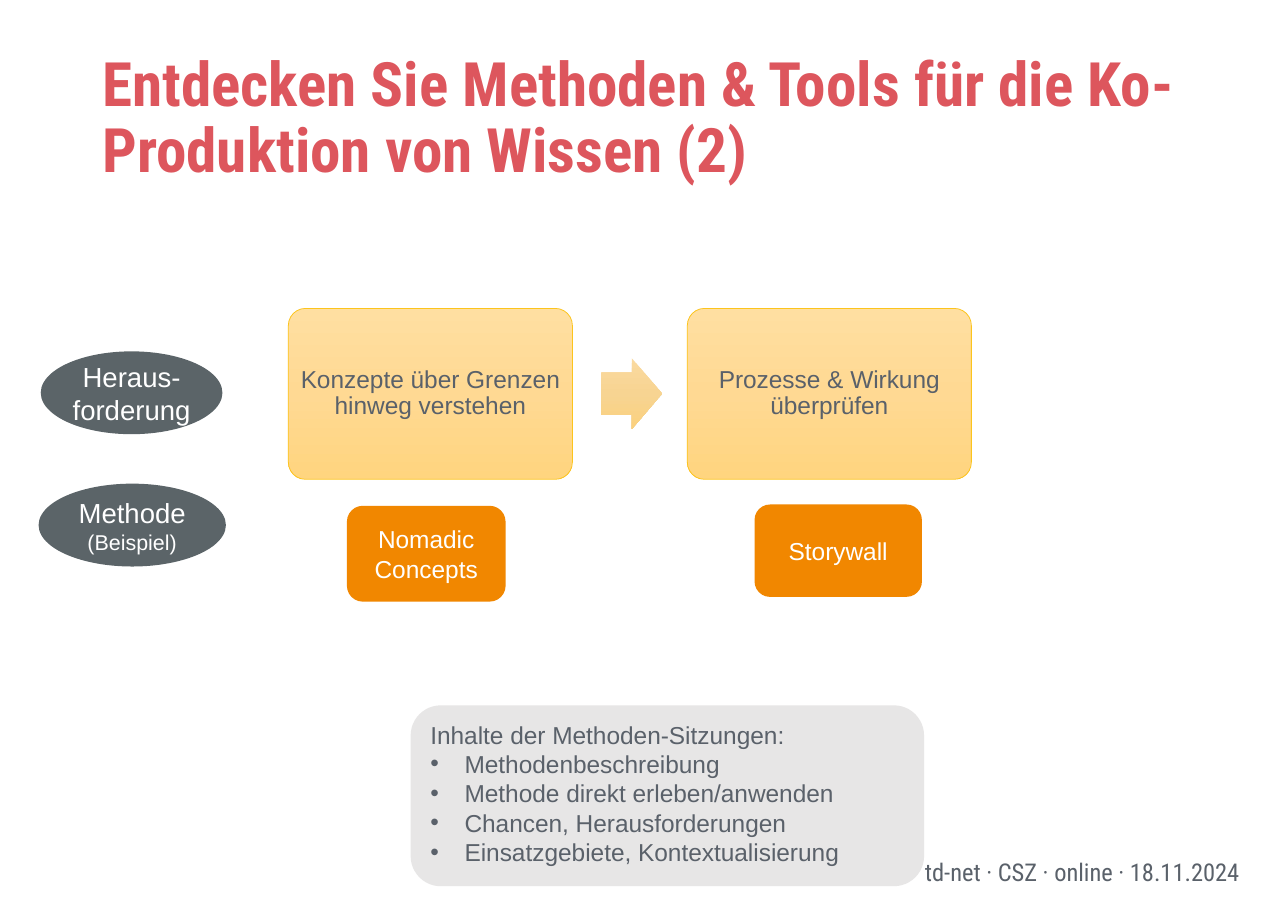
from copy import deepcopy
from dataclasses import dataclass

from lxml import etree
from pptx import Presentation
from pptx import util as u
from pptx.dml.color import RGBColor
from pptx.enum import shapes, text
from pptx.oxml.ns import qn

SANS, CONDENSED = "Arial", "Roboto Condensed"
GREY, WHITE, RED = "5A616A", "FFFFFF", "DD565D"
SLATE, ORANGE, PALE = "5B6468", "F18700", "E7E6E6"
STEP_STOPS = ("FFDFA1", "FFD993", "FFD57F")
ARROW_STOPS = ("FADAA0", "F7D492", "FBD17E")
CENTER, LEFT, RIGHT = text.PP_ALIGN.CENTER, text.PP_ALIGN.LEFT, text.PP_ALIGN.RIGHT
ROUNDED, OVAL = shapes.MSO_SHAPE.ROUNDED_RECTANGLE, shapes.MSO_SHAPE.OVAL
STEP_LEFT, STEP_PITCH, STEP_TOP = 6.65, 9.2, 7.11


@dataclass
class Box:
    """Place and size in centimetres."""
    left: float
    top: float
    width: float
    height: float

    def lengths(self):
        return [u.Cm(v) for v in (self.left, self.top, self.width, self.height)]


@dataclass
class Run:
    words: str
    size: float = 16
    color: str = WHITE
    font: str = SANS
    bold: bool = False


@dataclass
class Node:
    """A filled shape with one centred paragraph."""
    box: Box
    preset: int
    fill: str
    runs: list[Run]
    inset: float = 0.1


def rgb(hex_color: str) -> RGBColor:
    return RGBColor.from_string(hex_color)


def add_runs(paragraph, runs: list[Run], align=LEFT, spacing: float = 1.0) -> None:
    paragraph.alignment = align
    paragraph.line_spacing = spacing
    for item in runs:
        run = paragraph.add_run()
        run.text = item.words
        run.font.size = u.Pt(item.size)
        run.font.name = item.font
        run.font.bold = item.bold
        run.font.color.rgb = rgb(item.color)


def add_bullet(paragraph) -> None:
    properties = paragraph._p.get_or_add_pPr()
    properties.set("marL", str(u.Cm(0.79)))
    properties.set("indent", str(-u.Cm(0.79)))
    etree.SubElement(properties, qn("a:buFont"), typeface=SANS)
    etree.SubElement(properties, qn("a:buChar"), char="•")


def add_plain_shape(slide, preset, box: Box):
    shape = slide.shapes.add_shape(preset, *box.lengths())
    shape.shadow.inherit = False
    shape.line.fill.background()
    return shape


def fill_solid(shape, color: str) -> None:
    shape.fill.solid()
    shape.fill.fore_color.rgb = rgb(color)


def fill_gradient(shape, colors: tuple[str, ...]) -> None:
    """Fill from top to bottom with three evenly spaced colours."""
    shape.fill.gradient()
    shape.fill.gradient_angle = 270
    stop_list = shape.element.spPr.find(".//" + qn("a:gsLst"))
    stop_list.insert(1, deepcopy(stop_list[0]))
    for stop, color, position in zip(shape.fill.gradient_stops, colors, (0, 0.5, 1)):
        stop.color.rgb = rgb(color)
        stop.position = position


def write_centered(shape, runs: list[Run], inset: float, spacing: float = 1.0) -> None:
    frame = shape.text_frame
    frame.word_wrap = True
    frame.vertical_anchor = text.MSO_ANCHOR.MIDDLE
    frame.margin_left = frame.margin_right = u.Cm(inset)
    frame.margin_top = frame.margin_bottom = u.Cm(0.1)
    add_runs(frame.paragraphs[0], runs, CENTER, spacing)


def add_step(slide, index: int, challenge: str) -> None:
    box = Box(STEP_LEFT + index * STEP_PITCH, STEP_TOP, 6.55, 3.94)
    step = add_plain_shape(slide, ROUNDED, box)
    step.adjustments[0] = 0.1
    fill_gradient(step, STEP_STOPS)
    step.line.color.rgb = rgb("FCC41D")
    step.line.width = u.Pt(0.5)
    write_centered(step, [Run(challenge, color=GREY)], 0.1, 0.9)


def add_step_arrow(slide) -> None:
    arrow = add_plain_shape(slide, shapes.MSO_SHAPE.RIGHT_ARROW, Box(13.87, 8.26, 1.4, 1.63))
    arrow.adjustments[0] = 0.6
    arrow.adjustments[1] = 0.5
    fill_gradient(arrow, ARROW_STOPS)


def add_node(slide, node: Node) -> None:
    shape = add_plain_shape(slide, node.preset, node.box)
    fill_solid(shape, node.fill)
    write_centered(shape, node.runs, node.inset)


def add_text(slide, box: Box, run: Run, align=LEFT, spacing: float = 1.0) -> None:
    frame = slide.shapes.add_textbox(*box.lengths()).text_frame
    frame.word_wrap = True
    add_runs(frame.paragraphs[0], [run], align, spacing)


def add_session_panel(slide, heading: str, topics: tuple[str, ...]) -> None:
    panel = add_plain_shape(slide, ROUNDED, Box(9.47, 16.26, 11.84, 4.17))
    fill_solid(panel, PALE)
    frame = panel.text_frame
    frame.word_wrap = True
    frame.vertical_anchor = text.MSO_ANCHOR.TOP
    add_runs(frame.paragraphs[0], [Run(heading, color=GREY)])
    for topic in topics:
        paragraph = frame.add_paragraph()
        add_bullet(paragraph)
        add_runs(paragraph, [Run(topic, color=GREY)])


NODES = (
    Node(Box(8, 11.66, 3.66, 2.21), ROUNDED, ORANGE, [Run("Nomadic Concepts")], 0.2),
    Node(Box(0.89, 11.15, 4.32, 1.91), OVAL, SLATE,
         [Run("Methode ", 18), Run("(Beispiel)", 14)]),
    Node(Box(17.4, 11.63, 3.86, 2.13), ROUNDED, ORANGE, [Run("Storywall")], 0.25),
    Node(Box(0.94, 8.1, 4.19, 1.91), OVAL, SLATE, [Run("Heraus-forderung", 18)]),
)
CHALLENGES = ("Konzepte über Grenzen hinweg verstehen", "Prozesse & Wirkung überprüfen")
TOPICS = ("Methodenbeschreibung", "Methode direkt erleben/anwenden",
          "Chancen, Herausforderungen", "Einsatzgebiete, Kontextualisierung")


def main() -> None:
    deck = Presentation()
    deck.slide_width, deck.slide_height = u.Cm(29.7), u.Cm(21)
    slide = deck.slides.add_slide(deck.slide_layouts[6])
    for index, challenge in enumerate(CHALLENGES):
        add_step(slide, index, challenge)
    add_step_arrow(slide)
    add_text(slide, Box(9.83, 19.63, 19, 1.02),
             Run("td-net · CSZ · online · 18.11.2024", 16, GREY, CONDENSED), RIGHT)
    add_text(slide, Box(2.11, 1.12, 26.72, 4.06),
             Run("Entdecken Sie Methoden & Tools für die Ko-Produktion von Wissen (2)",
                 40, RED, CONDENSED, True), spacing=0.9)
    for node in NODES:
        add_node(slide, node)
    add_session_panel(slide, "Inhalte der Methoden-Sitzungen:", TOPICS)
    deck.save("out.pptx")


if __name__ == "__main__":
    main()
